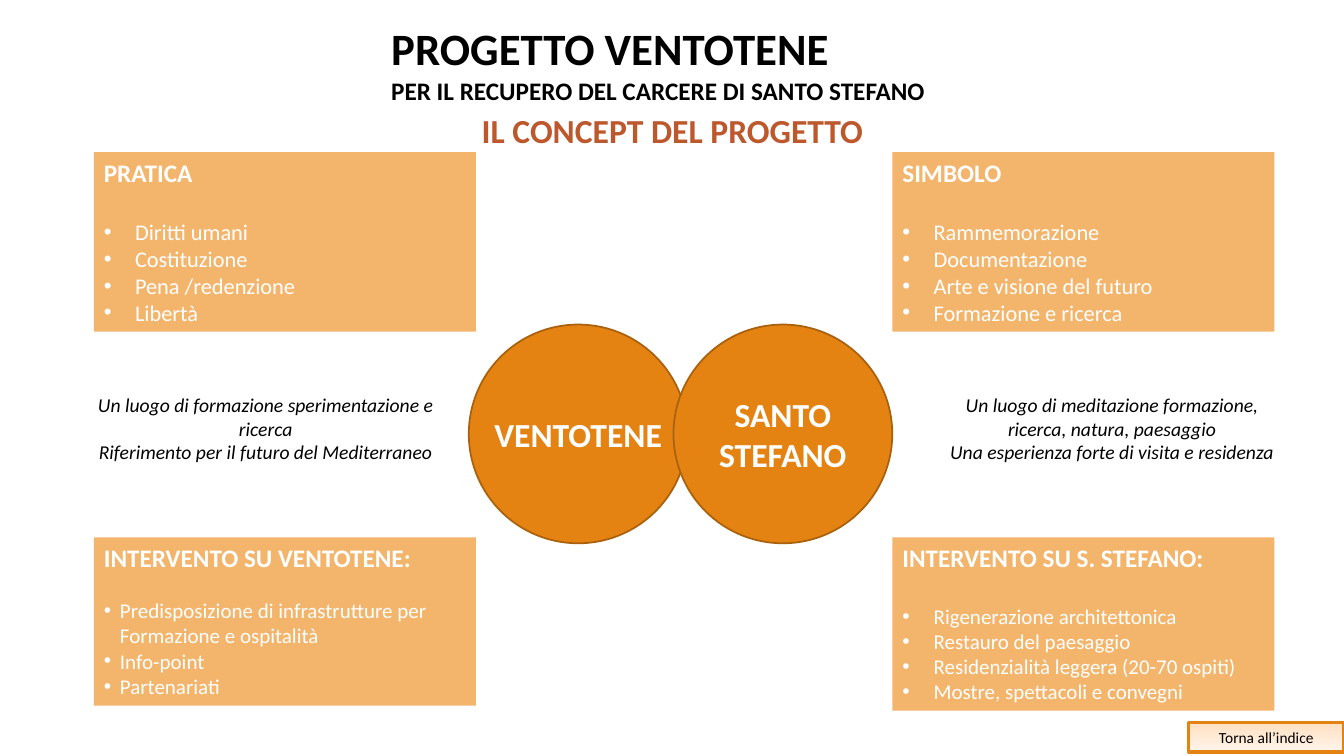
"""Build the Ventotene project concept slide."""
from dataclasses import dataclass

from lxml.etree import SubElement
from pptx import Presentation
from pptx.dml.color import RGBColor
from pptx.enum.shapes import MSO_SHAPE
from pptx.enum.text import MSO_ANCHOR, MSO_AUTO_SIZE, PP_ALIGN
from pptx.oxml.ns import qn
from pptx.util import Inches, Pt

TITLE = ["PROGETTO VENTOTENE", "PER IL RECUPERO DEL CARCERE DI SANTO STEFANO"]
SUBTITLE = "IL CONCEPT DEL PROGETTO"
BACK_LABEL = "Torna all’indice"
PANELS = [
    dict(slot=1, column=0, row=0, height=1.78, size=16, gap=18, indent=0.31, heading="PRATICA",
         items=["Diritti umani", "Costituzione", "Pena /redenzione", "Libertà"]),
    dict(slot=2, column=0, row=1, height=1.67, size=15, gap=15, indent=0.16,
         heading="INTERVENTO SU VENTOTENE:",
         items=["Predisposizione di infrastrutture per Formazione e ospitalità",
                "Info-point", "Partenariati"]),
    dict(slot=3, column=1, row=0, height=1.78, size=16, gap=18, indent=0.31, heading="SIMBOLO",
         items=["Rammemorazione", "Documentazione", "Arte e visione del futuro",
                "Formazione e ricerca"]),
    dict(slot=4, column=1, row=1, height=1.72, size=15, gap=18, indent=0.31,
         heading="INTERVENTO SU S. STEFANO:",
         items=["Rigenerazione architettonica", "Restauro del paesaggio",
                "Residenzialità leggera (20-70 ospiti)", "Mostre, spettacoli e convegni"]),
]
CIRCLES = [["VENTOTENE"], ["SANTO", "STEFANO"]]
QUOTES = [
    (0.84, 3.59, ["Un luogo di formazione sperimentazione e ricerca",
                  "Riferimento per il futuro del Mediterraneo"]),
    (9.17, 3.72, ["Un luogo di meditazione formazione, ricerca, natura, paesaggio",
                  "Una esperienza forte di visita e residenza"]),
]

SLIDE_WIDTH, SLIDE_HEIGHT = 13.33, 7.5
COLUMNS, ROWS, PANEL_WIDTH = (0.93, 8.85), (1.51, 5.33), 3.79
CIRCLE_LEFT, CIRCLE_TOP, CIRCLE_STEP, CIRCLE_SIZE = 4.65, 3.22, 2.03, 2.17
BUTTON_WIDTH, BUTTON_HEIGHT, BUTTON_TOP = 1.54, 0.29, 7.17
LINE_RATIO = 1.22


@dataclass(frozen=True)
class Theme:
    font: str = "Calibri"
    ink: str = "000000"
    white: str = "FFFFFF"
    accent: str = "BD582C"
    panel: str = "F3B56C"
    circle: str = "E48312"
    circle_edge: str = "A9610D"
    button_top: str = "FFE0C1"
    button_bottom: str = "FFF4EB"
    title: int = 32
    heading: int = 18
    label: int = 24
    quote: int = 14
    button: int = 11


THEME = Theme()


def color(code):
    return RGBColor.from_string(code)


def place(shape, left, top, width, height):
    shape.left, shape.top = Inches(left), Inches(top)
    shape.width, shape.height = Inches(width), Inches(height)


def write(shape, lines, sizes, ink, align=PP_ALIGN.LEFT, anchor=MSO_ANCHOR.TOP,
          bold=False, italic=False, wrap=True):
    frame = shape.text_frame
    frame.text = "\n".join(lines)
    frame.auto_size = MSO_AUTO_SIZE.NONE
    frame.word_wrap = wrap
    frame.vertical_anchor = anchor
    for para, size in zip(frame.paragraphs, sizes):
        para.alignment = align
        para.space_before = Pt(0)
        for span in para.runs:
            font = span.font
            font.name, font.size, font.bold, font.italic = THEME.font, Pt(size), bold, italic
            font.color.rgb = color(ink)
    return frame.paragraphs


def set_bullet(para, indent, symbol=None):
    properties = para._p.get_or_add_pPr()
    properties.set("marL", str(Inches(indent)))
    properties.set("indent", str(-Inches(indent)))
    if symbol:
        SubElement(properties, qn("a:buFont"), typeface="Arial")
        SubElement(properties, qn("a:buChar"), char=symbol)
    else:
        SubElement(properties, qn("a:buNone"))


def fill_panel(box, panel):
    place(box, COLUMNS[panel["column"]], ROWS[panel["row"]], PANEL_WIDTH, panel["height"])
    box.fill.solid()
    box.fill.fore_color.rgb = color(THEME.panel)
    items = panel["items"]
    sizes = [THEME.heading] + [panel["size"]] * len(items)
    heading, *bullets = write(box, [panel["heading"], *items], sizes, THEME.white)
    heading.runs[0].font.bold = True
    bullets[0].space_before = Pt(round(panel["gap"] * LINE_RATIO))
    set_bullet(heading, 0)
    for para in bullets:
        set_bullet(para, panel["indent"], "•")


def add_box(slide, left, top, width, height):
    return slide.shapes.add_textbox(*map(Inches, (left, top, width, height)))


def add_outlined(slide, kind, left, top, width, height, edge, weight):
    shape = slide.shapes.add_shape(kind, *map(Inches, (left, top, width, height)))
    shape.shadow.inherit = False
    shape.line.color.rgb = color(edge)
    shape.line.width = Pt(weight)
    return shape


def add_circle(slide, position, lines):
    circle = add_outlined(slide, MSO_SHAPE.OVAL, CIRCLE_LEFT + position * CIRCLE_STEP, CIRCLE_TOP,
                          CIRCLE_SIZE, CIRCLE_SIZE, THEME.circle_edge, 1.25)
    circle.fill.solid()
    circle.fill.fore_color.rgb = color(THEME.circle)
    write(circle, lines, [THEME.label] * len(lines), THEME.white, PP_ALIGN.CENTER,
          MSO_ANCHOR.MIDDLE, bold=True, wrap=False)


def add_button(slide):
    button = add_outlined(slide, MSO_SHAPE.RECTANGLE, SLIDE_WIDTH - BUTTON_WIDTH, BUTTON_TOP,
                          BUTTON_WIDTH, BUTTON_HEIGHT, THEME.circle, 2.25)
    button.fill.gradient()
    button.fill.gradient_angle = 270
    for stop, code in zip(button.fill.gradient_stops, (THEME.button_top, THEME.button_bottom)):
        stop.color.rgb = color(code)
    write(button, [BACK_LABEL], [THEME.button], THEME.ink, PP_ALIGN.CENTER, MSO_ANCHOR.MIDDLE)


def main():
    deck = Presentation()
    deck.slide_width, deck.slide_height = Inches(SLIDE_WIDTH), Inches(SLIDE_HEIGHT)
    page = deck.slides.add_slide(deck.slide_layouts.get_by_name("Comparison"))

    title = page.shapes.title
    place(title, 3.78, 0.16, 5.63, 0.94)
    write(title, TITLE, [THEME.title, THEME.heading], THEME.ink, bold=True)
    subtitle = add_box(page, 4.68, 1.04, 5.63, 0.5)
    write(subtitle, [SUBTITLE], [THEME.label], THEME.accent, bold=True)

    boxes = {box.placeholder_format.idx: box for box in page.placeholders}
    for panel in PANELS:
        fill_panel(boxes[panel["slot"]], panel)
    for position, lines in enumerate(CIRCLES):
        add_circle(page, position, lines)
    for left, width, lines in QUOTES:
        quote = add_box(page, left, 3.85, width, 0.81)
        write(quote, lines, [THEME.quote] * len(lines), THEME.ink, PP_ALIGN.CENTER, italic=True)
    add_button(page)
    deck.save("out.pptx")


if __name__ == "__main__":
    main()
